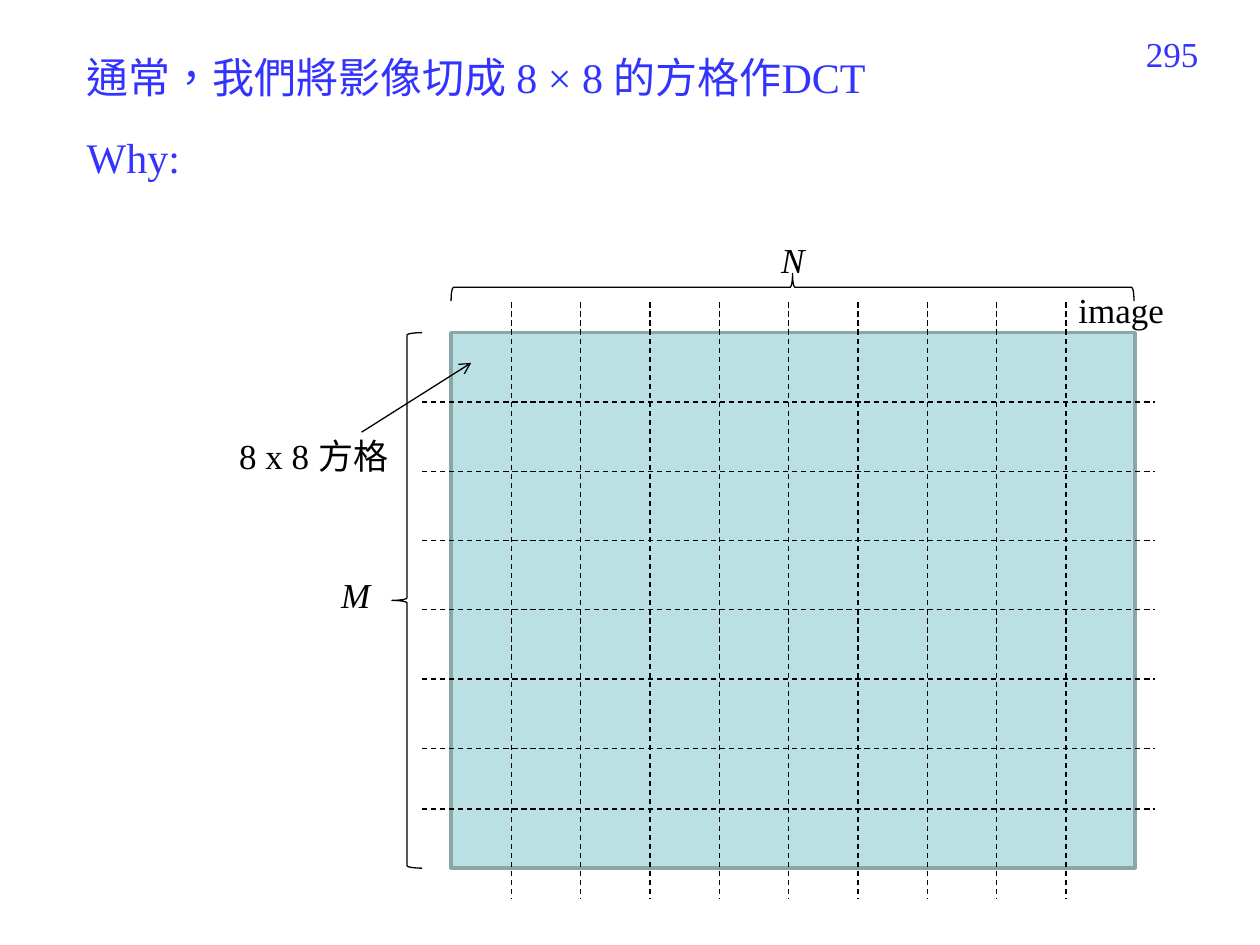
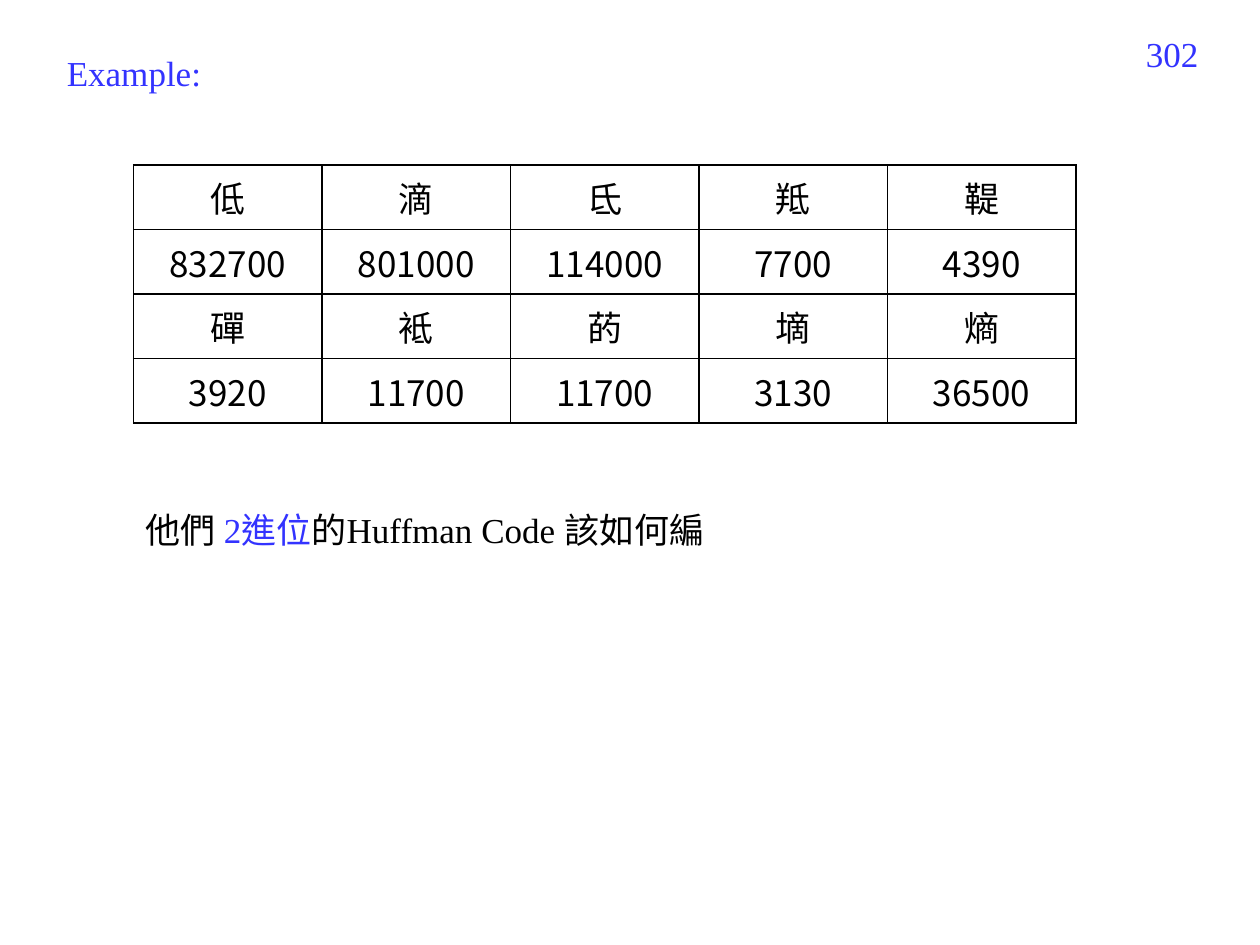
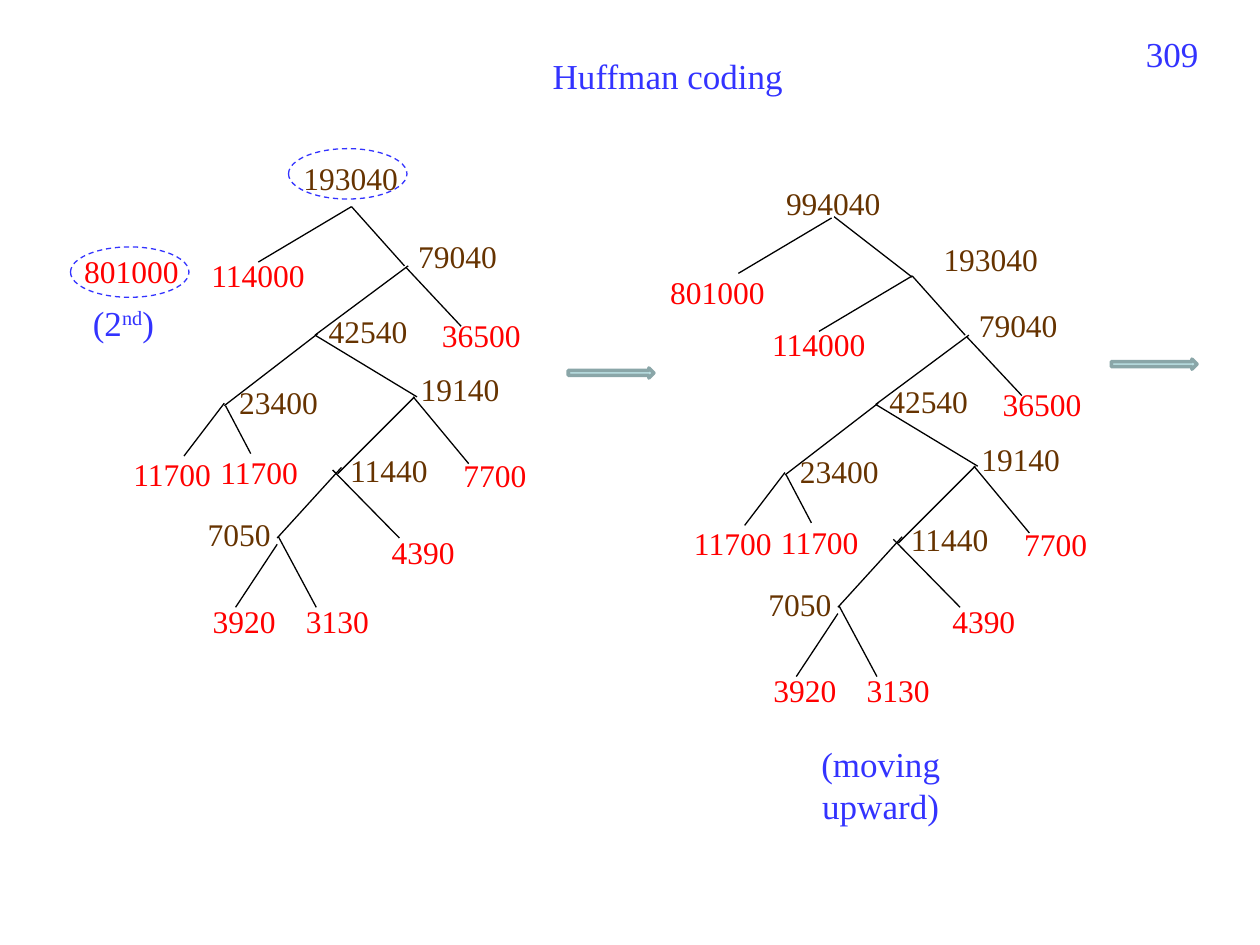
from lxml.etree import SubElement
from pptx import Presentation
from pptx.dml.color import RGBColor
from pptx.enum.dml import MSO_LINE
from pptx.enum.shapes import MSO_CONNECTOR, MSO_SHAPE
from pptx.enum.text import MSO_ANCHOR, MSO_AUTO_SIZE, PP_ALIGN
from pptx.oxml.ns import qn
from pptx.util import Pt

PX = 9144
LATIN = "Times New Roman"
CJK = "Noto Sans CJK SC"
BLUE = RGBColor(0x33, 0x33, 0xFF)
BLACK = RGBColor(0, 0, 0)
RED = RGBColor(0xFF, 0, 0)
BROWN = RGBColor(0x66, 0x33, 0)
TEAL = RGBColor(0xBB, 0xE0, 0xE3)
SLATE = RGBColor(0x8A, 0xA6, 0xA8)
LEFT, CENTER, RIGHT = PP_ALIGN.LEFT, PP_ALIGN.CENTER, PP_ALIGN.RIGHT
TOP, MIDDLE = MSO_ANCHOR.TOP, MSO_ANCHOR.MIDDLE


def put_text(sp, runs, box=None, size=20, align=LEFT, anchor=TOP, wrap=True, font=LATIN):
    tf = sp.text_frame
    if box:
        sp.left, sp.top, sp.width, sp.height = (v * PX for v in box)
        tf.word_wrap = wrap
        tf.auto_size = MSO_AUTO_SIZE.SHAPE_TO_FIT_TEXT
        tf.vertical_anchor = anchor
    p = tf.paragraphs[0]
    p.alignment = align
    for text, color in runs:
        r = p.add_run()
        r.text = text
        r.font.size = Pt(size)
        r.font.color.rgb = color
        r.font.name = font
        rPr = r._r.get_or_add_rPr()
        rPr.set("lang", "zh-TW")
        SubElement(rPr, qn("a:ea")).set("typeface", CJK)
    return p


def add_line(s, x1, y1, x2, y2, dash=None):
    ln = s.shapes.add_connector(MSO_CONNECTOR.STRAIGHT, x1 * PX, y1 * PX, x2 * PX, y2 * PX)
    ln.line.color.rgb = BLACK
    ln.line.width = Pt(0.75)
    if dash:
        ln.line.dash_style = dash
    SubElement(ln._element.spPr, qn("a:effectLst"))
    return ln


prs = Presentation()
prs.slide_width, prs.slide_height = 1000 * PX, 750 * PX

titles = [
    (295, "通常，我們將影像切成 8 × 8 的方格作DCT", (59, 36, 645, 50), 24, LEFT, MIDDLE),
    (302, "Example:", (43, 36, 220, 43), 20, LEFT, TOP),
    (309, "Huffman coding", (279, 38, 502, 44), 20, CENTER, TOP),
]
slides = []
for number, title, box, size, align, anchor in titles:
    s = prs.slides.add_slide(prs.slide_layouts[5])
    put_text(s.shapes.title, [(title, BLUE)], box, size, align, anchor)
    put_text(s.shapes.add_textbox(0, 0, 0, 0), [(str(number), BLUE)], (728, 21, 233, 52), align=RIGHT)
    slides.append(s)
grid_slide, table_slide, tree_slide = slides

s = grid_slide
put_text(s.shapes.add_textbox(0, 0, 0, 0), [("Why:", BLUE)], (59, 99, 204, 51), 24, anchor=MIDDLE, wrap=False)
image = s.shapes.add_shape(MSO_SHAPE.RECTANGLE, 358 * PX, 264 * PX, 543 * PX, 425 * PX)
image.shadow.inherit = False
image.fill.solid()
image.fill.fore_color.rgb = TEAL
image.line.color.rgb = SLATE
image.line.width = Pt(2)
for i in range(9):
    x = 406 + 55 * i
    add_line(s, x, 240, x, 713, MSO_LINE.DASH)
for y in [319 + 55 * i for i in range(6)] + [642]:
    add_line(s, 335, y, 917, y, MSO_LINE.DASH)
pointer = add_line(s, 287, 343, 374, 288)
SubElement(pointer.line._get_or_add_ln(), qn("a:tailEnd")).set("type", "arrow")
for box, rotation in [((311, 264, 24, 425), 0), ((618, -43, 22, 542), 90)]:
    brace = s.shapes.add_shape(MSO_SHAPE.LEFT_BRACE, *(v * PX for v in box))
    brace.rotation = rotation
    brace.shadow.inherit = False
    brace.fill.background()
    brace.line.color.rgb = BLACK
    brace.line.width = Pt(0.75)
for text, box, italic in [
    ("image", (846, 224, 109, 44), False),
    ("8 x 8 方格", (180, 340, 161, 44), False),
    ("M", (261, 450, 52, 44), True),
    ("N", (610, 184, 55, 44), True),
]:
    p = put_text(s.shapes.add_textbox(0, 0, 0, 0), [(text, BLACK)], box)
    p.runs[0].font.italic = italic

s = table_slide
rows = [
    ["低", "滴", "氐", "羝", "鞮"],
    ["832700", "801000", "114000", "7700", "4390"],
    ["磾", "袛", "菂", "墑", "熵"],
    ["3920", "11700", "11700", "3130", "36500"],
]
table = s.shapes.add_table(4, 5, 106 * PX, 131 * PX, 748 * PX, 205 * PX).table
table.first_row = table.horz_banding = False
for i, row in enumerate(rows):
    for j, text in enumerate(row):
        cell = table.cell(i, j)
        cell.vertical_anchor = MIDDLE
        put_text(cell, [(text, BLACK)], align=CENTER, font=CJK)
        tcPr = cell._tc.get_or_add_tcPr()
        for side in ("lnL", "lnR", "lnT", "lnB"):
            ln = SubElement(tcPr, qn(f"a:{side}"), w=str(Pt(1)))
            fill = SubElement(ln, qn("a:solidFill"))
            SubElement(fill, qn("a:srgbClr")).set("val", str(BLACK))
        cell.fill.background()
question = [("他們 ", BLACK), ("2進位", BLUE), ("的Huffman Code 該如何編", BLACK)]
put_text(s.shapes.add_textbox(0, 0, 0, 0), question, (106, 399, 471, 43), anchor=MIDDLE)

s = tree_slide
branches = [
    (271, 371, 220, 427), (264, 373, 317, 427), (220, 432, 187, 482), (221, 426, 251, 482),
    (328, 315, 372, 368), (329, 315, 268, 376), (178, 320, 146, 362), (179, 322, 199, 360),
    (252, 265, 178, 322), (250, 266, 331, 315), (250, 266, 324, 211), (366, 259, 322, 212),
    (205, 208, 279, 164), (321, 211, 279, 164),
]
nodes = [
    ("36500", 341, 246, 86, RED), ("3130", 233, 473, 70, RED), ("3920", 159, 473, 70, RED),
    ("4390", 301, 418, 70, RED), ("7050", 155, 404, 71, BROWN), ("11440", 268, 353, 82, BROWN),
    ("11700", 165, 355, 83, RED), ("7700", 358, 357, 70, RED), ("19140", 324, 289, 83, BROWN),
    ("11700", 96, 356, 83, RED), ("23400", 180, 299, 100, BROWN), ("42540", 251, 243, 83, BROWN),
    ("114000", 158, 198, 96, RED), ("79040", 322, 183, 83, BROWN),
]
labels = [
    ("193040", 231, 121, 96, BROWN), ("801000", 57, 195, 95, RED),
    ("994040", 614, 141, 96, BROWN), ("801000", 522, 212, 95, RED), ("193040", 739, 186, 96, BROWN),
]
lines = [(586, 217, 660, 173), (724, 220, 662, 172)]
for dx, dy in [(0, 0), (445, 55)]:
    lines += [(x1 + dx, y1 + dy, x2 + dx, y2 + dy) for x1, y1, x2, y2 in branches]
    labels += [(text, x + dx, y + dy, w, color) for text, x, y, w, color in nodes]
for ends in lines:
    add_line(s, *ends)
for text, x, y, w, color in labels:
    wrap = text in ("36500", "23400", "114000")
    put_text(s.shapes.add_textbox(0, 0, 0, 0), [(text, color)], (x, y, w, 40), 18, wrap=wrap)
for x, y in [(451, 292), (882, 285)]:
    arrow = s.shapes.add_shape(MSO_SHAPE.RIGHT_ARROW, x * PX, y * PX, 68 * PX, 8 * PX)
    arrow.shadow.inherit = False
    arrow.fill.solid()
    arrow.fill.fore_color.rgb = TEAL
    arrow.line.color.rgb = SLATE
    arrow.line.width = Pt(2)
for x, y in [(56, 196), (229, 118)]:
    ring = s.shapes.add_shape(MSO_SHAPE.OVAL, x * PX, y * PX, 94 * PX, 40 * PX)
    ring.shadow.inherit = False
    ring.fill.background()
    ring.line.color.rgb = BLUE
    ring.line.width = Pt(0.75)
    ring.line.dash_style = MSO_LINE.DASH
second = [("(2", BLUE), ("nd", BLUE), (")", BLUE)]
p = put_text(s.shapes.add_textbox(0, 0, 0, 0), second, (48, 234, 100, 44), align=CENTER)
p.runs[1]._r.get_or_add_rPr().set("baseline", "30000")
put_text(s.shapes.add_textbox(0, 0, 0, 0), [("(moving upward)", BLUE)], (596, 584, 206, 44), align=CENTER)

prs.save("out.pptx")
